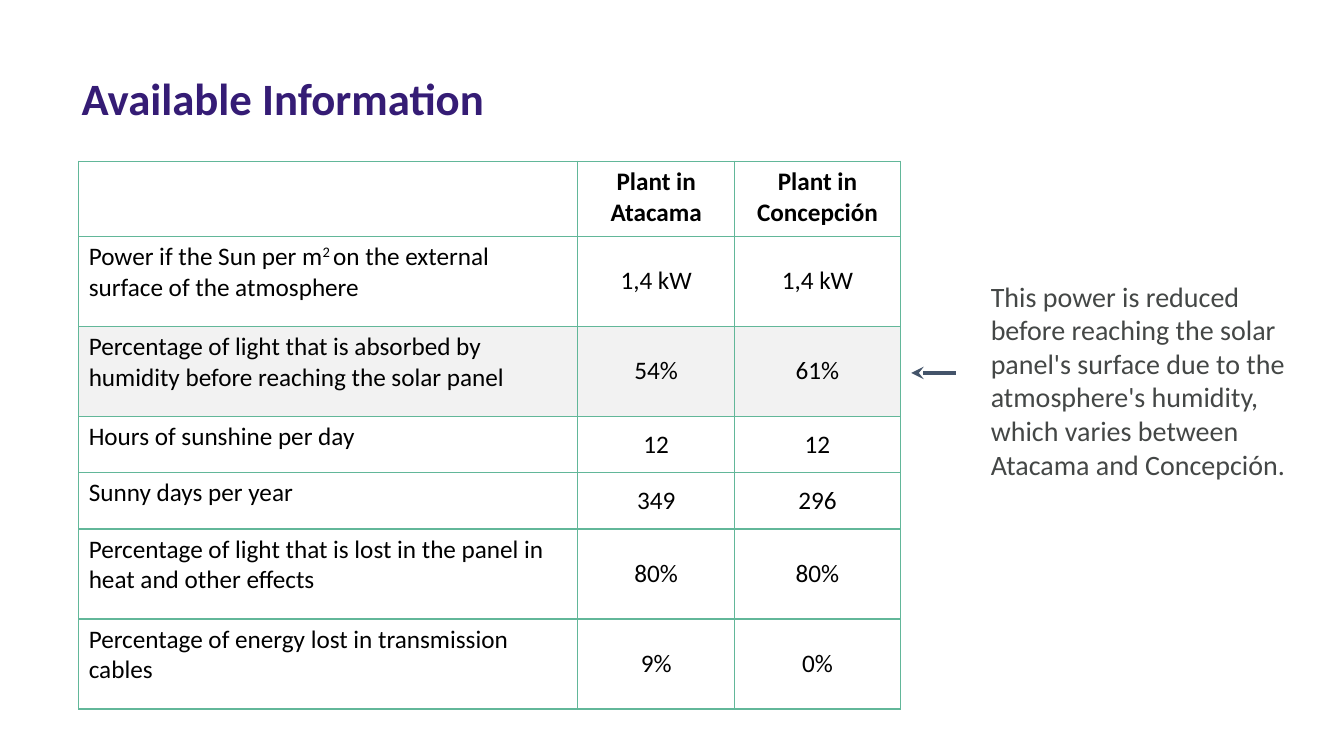
from dataclasses import dataclass

from lxml import etree
from pptx import Presentation
from pptx import util as u
from pptx.dml.color import RGBColor
from pptx.enum import shapes, text
from pptx.oxml import ns

COLORS = {
    "title": "351C75",
    "text": "000000",
    "note": "444746",
    "grid": "62B799",
    "shade": "F2F2F2",
    "arrow": "44546A",
}
FONT = "Calibri"
LEFT, MID = text.PP_ALIGN.LEFT, text.PP_ALIGN.CENTER
TOP, CENTER = text.MSO_ANCHOR.TOP, text.MSO_ANCHOR.MIDDLE


@dataclass
class Row:
    label: str
    north: str
    south: str
    height: float
    shade: bool = False
    head: bool = False


# "^" marks the start and end of a superscript
ROWS = [
    Row("", "Plant in Atacama", "Plant in Concepción", 53.6, head=True),
    Row("Power if the Sun per m^2 ^on the external surface of the atmosphere",
        "1,4 kW", "1,4 kW", 64.3),
    Row("Percentage of light that is absorbed by humidity before reaching the solar panel",
        "54%", "61%", 64.3, shade=True),
    Row("Hours of sunshine per day", "12", "12", 40.3),
    Row("Sunny days per year", "349", "296", 40.3),
    Row("Percentage of light that is lost in the panel in heat and other effects",
        "80%", "80%", 64.3),
    Row("Percentage of energy lost in transmission cables", "9%", "0%", 64.3),
]
WIDTHS = [356.4, 112.3, 118.1]


def rgb(name: str) -> RGBColor:
    return RGBColor.from_string(COLORS[name])


def write(frame, words: str, size: float = 18, color: str = "text",
          bold: bool = False, align=LEFT) -> None:
    """Fill the first paragraph of a text frame with formatted runs."""
    frame.word_wrap = True
    para = frame.paragraphs[0]
    para.alignment = align
    for i, part in enumerate(words.split("^")):
        run = para.add_run()
        run.text = part
        font = run.font
        font.name, font.size, font.bold = FONT, u.Pt(size), bold
        font.color.rgb = rgb(color)
        if i % 2:
            run._r.get_or_add_rPr().set("baseline", "30000")


def frame_cell(cell) -> None:
    """Draw the four borders of a table cell."""
    props = cell._tc.get_or_add_tcPr()
    for side in ("a:lnL", "a:lnR", "a:lnT", "a:lnB"):
        line = etree.SubElement(props, ns.qn(side), w=str(u.Pt(1)))
        fill = etree.SubElement(line, ns.qn("a:solidFill"))
        etree.SubElement(fill, ns.qn("a:srgbClr"), val=COLORS["grid"])


def add_grid(slide, left: float, top: float) -> None:
    high = sum(row.height for row in ROWS)
    grid = slide.shapes.add_table(
        len(ROWS), len(WIDTHS), u.Pt(left), u.Pt(top),
        u.Pt(sum(WIDTHS)), u.Pt(high)).table
    grid.first_row = grid.horz_banding = False
    for col, width in zip(grid.columns, WIDTHS):
        col.width = u.Pt(width)
    for r, row in enumerate(ROWS):
        grid.rows[r].height = u.Pt(row.height)
        for c, words in enumerate((row.label, row.north, row.south)):
            cell = grid.cell(r, c)
            cell.margin_left = cell.margin_right = u.Pt(7.2)
            cell.margin_top = cell.margin_bottom = u.Pt(3.6)
            cell.vertical_anchor = CENTER if c and not row.head else TOP
            frame_cell(cell)
            if row.shade:
                cell.fill.solid()
                cell.fill.fore_color.rgb = rgb("shade")
            else:
                cell.fill.background()
            if words:
                write(cell.text_frame, words, bold=row.head, align=MID if c else LEFT)


def add_arrow(slide, start: float, end: float, y: float) -> None:
    arrow = slide.shapes.add_connector(
        shapes.MSO_CONNECTOR.STRAIGHT, u.Pt(start), u.Pt(y), u.Pt(end), u.Pt(y))
    arrow.line.color.rgb = rgb("arrow")
    arrow.line.width = u.Pt(3)
    etree.SubElement(arrow.line._get_or_add_ln(), ns.qn("a:tailEnd"), type="stealth")
    etree.SubElement(arrow._element.spPr, ns.qn("a:effectLst"))


def main() -> None:
    deck = Presentation()
    deck.slide_width, deck.slide_height = u.Pt(960), u.Pt(540)
    slide = deck.slides.add_slide(deck.slide_layouts[5])

    # Title
    title = slide.shapes.title
    title.left, title.top = u.Pt(51.1), u.Pt(46.8)
    title.width, title.height = u.Pt(618.5), u.Pt(46)
    title.text_frame.vertical_anchor = TOP
    write(title.text_frame, "Available Information", size=32, color="title", bold=True)
    title.text_frame.auto_size = text.MSO_AUTO_SIZE.SHAPE_TO_FIT_TEXT

    # Plant data
    add_grid(slide, 56.2, 115.2)

    # Note on humidity, with its arrow
    note = slide.shapes.add_textbox(u.Pt(700.6), u.Pt(195.8), u.Pt(226.8), u.Pt(152.6))
    write(note.text_frame,
          "This power is reduced before reaching the solar panel's surface due to the "
          "atmosphere's humidity, which varies between Atacama and Concepción.",
          size=20, color="note")
    note.text_frame.auto_size = text.MSO_AUTO_SIZE.SHAPE_TO_FIT_TEXT
    add_arrow(slide, 682.6, 650.9, 266.4)

    deck.save("out.pptx")


if __name__ == "__main__":
    main()
